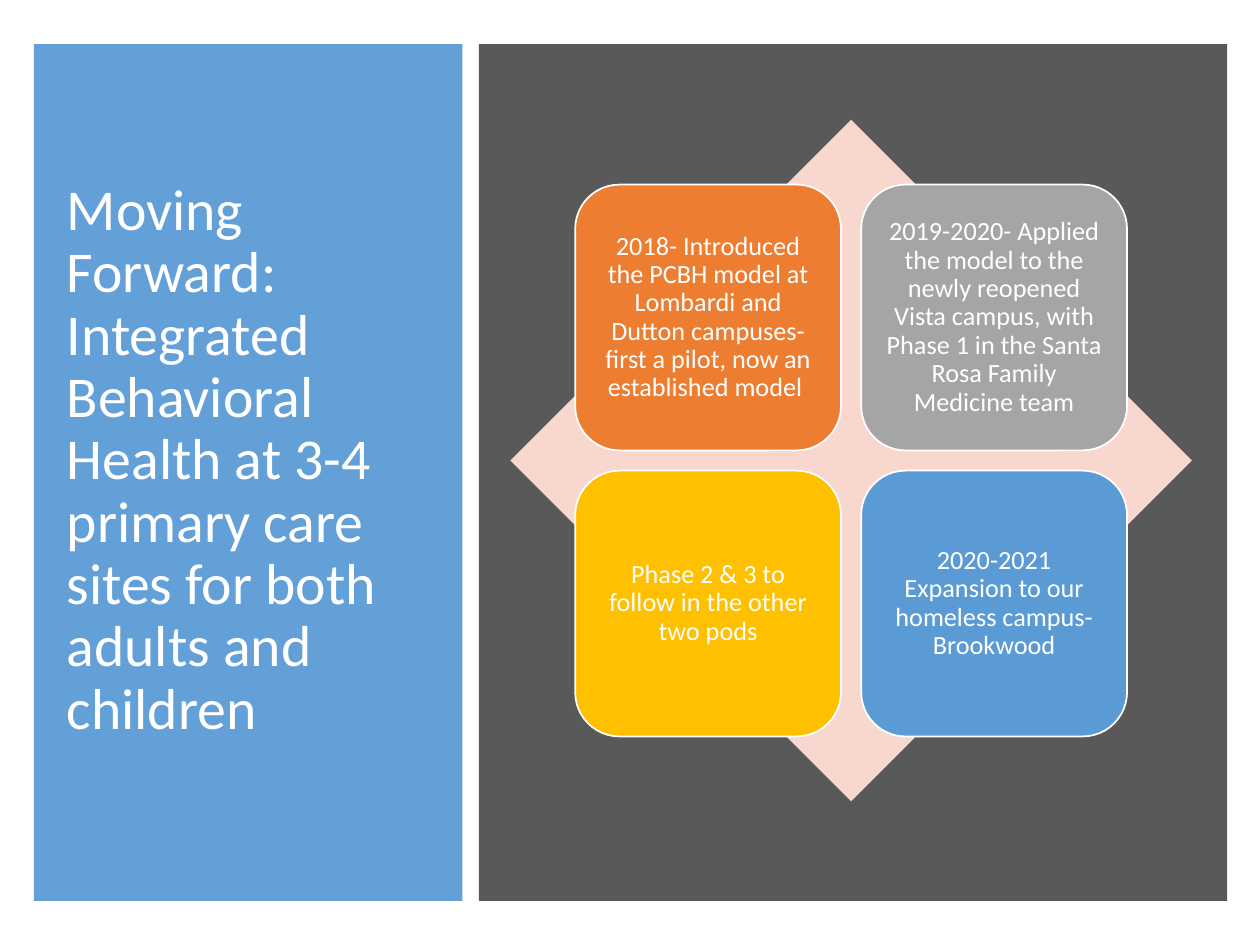
import pptx
import pptx.util
import pptx.oxml
import pptx.oxml.ns
import pptx.dml.color
import pptx.enum.shapes
import pptx.enum.text

Inches = pptx.util.Inches
Kind = pptx.enum.shapes.MSO_SHAPE
Align = pptx.enum.text.PP_ALIGN

TITLE = ("Moving Forward:\vIntegrated Behavioral Health at 3-4 primary care "
         "sites for both adults and children")
PHASES = [
    ("2018- Introduced the PCBH model at Lombardi and Dutton campuses- "
     "first a pilot, now an established model ", "orange"),
    ("2019-2020- Applied the model to the newly reopened Vista campus, "
     "with Phase 1 in the Santa Rosa Family Medicine team", "gray"),
    ("Phase 2 & 3 to follow in the other two pods", "gold"),
    ("2020-2021 Expansion to our homeless campus- Brookwood", "blue"),
]
COLORS = {
    "white": "FFFFFF", "blue": "5B9BD5", "charcoal": "595959",
    "blush": "F8D7CE", "orange": "ED7D31", "gray": "A5A5A5", "gold": "FFC000",
}
TITLE_FORMAT = {"size": 33, "align": Align.LEFT, "inset_x": 0.1, "inset_y": 0.05}
PHASE_FORMAT = {"size": 15, "align": Align.CENTER, "inset_x": 0.06, "inset_y": 0.06}

DIAMOND_LEFT, DIAMOND_TOP, DIAMOND_SIZE = 4.05, 0.95, 5.41
TILE_SIZE, TILE_STEP = 2.11, 2.27


def rgb(name):
    return pptx.dml.color.RGBColor.from_string(COLORS[name])


def add_block(slide, kind, area, color, outlined=False):
    block = slide.shapes.add_shape(kind, *map(Inches, area))
    block.shadow.inherit = False
    block.fill.solid()
    block.fill.fore_color.rgb = rgb(color)
    if outlined:
        block.line.color.rgb = rgb("white")
        block.line.width = pptx.util.Pt(1)
    else:
        block.line.fill.background()
    return block


def write_text(shape, text, style):
    frame = shape.text_frame
    frame.text = text
    inset_x, inset_y = Inches(style["inset_x"]), Inches(style["inset_y"])
    frame_format = {
        "word_wrap": True,
        "auto_size": pptx.enum.text.MSO_AUTO_SIZE.NONE,
        "vertical_anchor": pptx.enum.text.MSO_ANCHOR.MIDDLE,
        "margin_left": inset_x, "margin_right": inset_x,
        "margin_top": inset_y, "margin_bottom": inset_y,
    }
    for name, value in frame_format.items():
        setattr(frame, name, value)
    para = frame.paragraphs[0]
    para.alignment = style["align"]
    para.line_spacing = 0.9
    for span in para.runs:
        span.font.name = "Calibri"
        span.font.size = pptx.util.Pt(style["size"])
        span.font.color.rgb = rgb("white")


def set_opacity(shape, percent):
    color = shape.fill._xPr.find(".//" + pptx.oxml.ns.qn("a:srgbClr"))
    alpha = color.makeelement(pptx.oxml.ns.qn("a:alpha"), {"val": str(percent * 1000)})
    color.append(alpha)


def add_title(slide):
    panel = add_block(slide, Kind.RECTANGLE, (0.27, 0.35, 3.4, 6.8), "blue")
    set_opacity(panel, 95)
    title = slide.shapes.title
    title.left, title.top, title.width, title.height = map(Inches, (0.43, 0.64, 3.05, 6.04))
    write_text(title, TITLE, TITLE_FORMAT)
    title._element.addprevious(panel._element)  # panel goes behind the title


def add_phase_matrix(slide):
    """Lay the four phases out two by two, centred on the diamond."""
    add_block(slide, Kind.RECTANGLE, (3.8, 0.35, 5.94, 6.8), "charcoal")
    add_block(slide, Kind.DIAMOND,
              (DIAMOND_LEFT, DIAMOND_TOP, DIAMOND_SIZE, DIAMOND_SIZE), "blush")
    margin = (DIAMOND_SIZE - TILE_STEP - TILE_SIZE) / 2
    for index, (text, color) in enumerate(PHASES):
        row, column = divmod(index, 2)
        area = (DIAMOND_LEFT + margin + column * TILE_STEP,
                DIAMOND_TOP + margin + row * TILE_STEP, TILE_SIZE, TILE_SIZE)
        tile = add_block(slide, Kind.ROUNDED_RECTANGLE, area, color, outlined=True)
        write_text(tile, text, PHASE_FORMAT)


def main():
    deck = pptx.Presentation()
    deck.slide_width, deck.slide_height = Inches(10), Inches(7.5)
    slide = deck.slides.add_slide(deck.slide_layouts.get_by_name("Title Only"))
    add_title(slide)
    add_phase_matrix(slide)
    deck.save("out.pptx")


if __name__ == "__main__":
    main()
